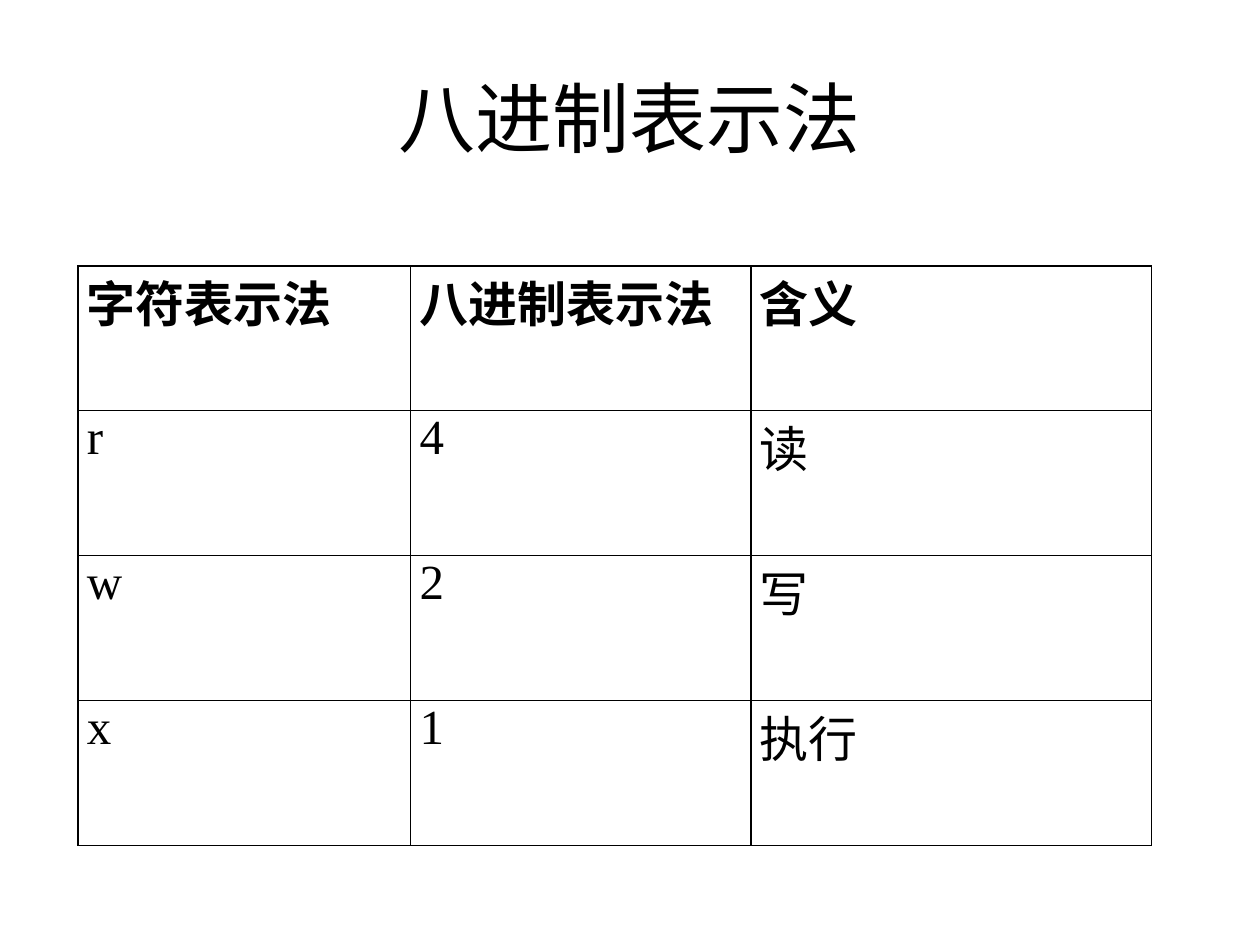
from lxml.etree import SubElement
from pptx import Presentation
from pptx.dml.color import RGBColor
from pptx.enum.text import MSO_ANCHOR, PP_ALIGN
from pptx.oxml import parse_xml
from pptx.oxml.ns import nsdecls, qn
from pptx.util import Inches, Pt

COLORS = {"text": "000000", "border": "000000"}
FONT = "Times New Roman"
ROWS = [
    ["字符表示法", "八进制表示法", "含义"],
    ["r", "4", "读"],
    ["w", "2", "写"],
    ["x", "1", "执行"],
]
COLUMN_WIDTHS = [2.64, 2.7, 3.18]
ROW_HEIGHT = 1.15


def style_paragraph(paragraph, size, alignment, bold=False):
    paragraph.alignment = alignment
    paragraph.font.name = FONT
    paragraph.font.size = Pt(size)
    paragraph.font.bold = bold
    paragraph.font.color.rgb = RGBColor.from_string(COLORS["text"])


def add_borders(cell):
    properties = cell._tc.get_or_add_tcPr()
    for position, side in enumerate(["lnL", "lnR", "lnT", "lnB"]):
        properties.insert(position, parse_xml(
            f'<a:{side} {nsdecls("a")} w="{Pt(1)}"><a:solidFill>'
            f'<a:srgbClr val="{COLORS["border"]}"/></a:solidFill></a:{side}>'))


prs = Presentation()
prs.slide_width = Inches(10)
prs.slide_height = Inches(7.5)
slide = prs.slides.add_slide(prs.slide_layouts[5])

title = slide.shapes.title
title.left, title.top = Inches(0.5), Inches(0.3)
title.width, title.height = Inches(9), Inches(1.25)
title.text_frame.text = "八进制表示法"
title.text_frame.vertical_anchor = MSO_ANCHOR.MIDDLE
style_paragraph(title.text_frame.paragraphs[0], 44, PP_ALIGN.CENTER)

permissions = slide.shapes.add_table(
    len(ROWS), len(COLUMN_WIDTHS), Inches(0.62), Inches(2.11),
    Inches(sum(COLUMN_WIDTHS)), Inches(ROW_HEIGHT * len(ROWS))).table
permissions.first_row = False
permissions.horz_banding = False
for column, width in zip(permissions.columns, COLUMN_WIDTHS):
    column.width = Inches(width)

for row_index, labels in enumerate(ROWS):
    permissions.rows[row_index].height = Inches(ROW_HEIGHT)
    is_header = row_index == 0
    for column_index, label in enumerate(labels):
        cell = permissions.cell(row_index, column_index)
        cell.text = label
        cell.margin_left = cell.margin_right = Inches(0.07)
        cell.margin_top = cell.margin_bottom = 0
        cell.fill.background()
        add_borders(cell)
        paragraph = cell.text_frame.paragraphs[0]
        if is_header:
            indents = paragraph._p.get_or_add_pPr()
            indents.set("marL", str(Inches(0.25)))
            indents.set("indent", str(Inches(-0.25)))
            tabs = SubElement(indents, qn("a:tabLst"))
            SubElement(tabs, qn("a:tab"), pos=str(Inches(2.92)), algn="ctr")
        style_paragraph(paragraph, 28, PP_ALIGN.JUSTIFY, is_header)

prs.save("out.pptx")
